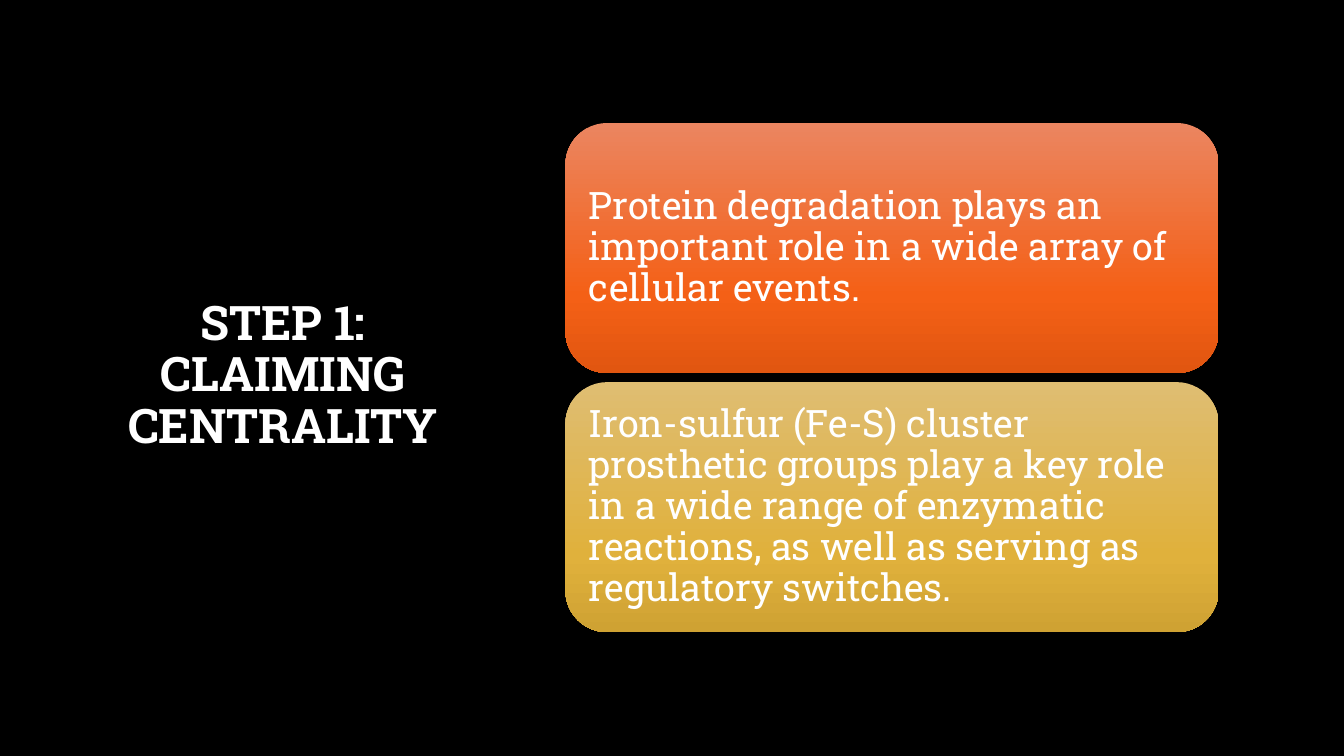
from copy import deepcopy

from pptx import Presentation
from pptx.dml.color import RGBColor
from pptx.enum.shapes import MSO_SHAPE as Shape
from pptx.enum.text import MSO_ANCHOR as Anchor, PP_ALIGN as Align
from pptx.util import Cm, Pt

FONT = "Roboto Slab"
BLACK = RGBColor(0x00, 0x00, 0x00)
WHITE = RGBColor(0xFF, 0xFF, 0xFF)
ORANGE = [RGBColor(0xEB, 0x85, 0x60), RGBColor(0xF4, 0x60, 0x16), RGBColor(0xE1, 0x56, 0x10)]
GOLD = [RGBColor(0xDF, 0xBD, 0x72), RGBColor(0xE0, 0xB1, 0x3C), RGBColor(0xCF, 0xA2, 0x33)]
STOPS = [0, 0.69, 1]

CARDS = [
    ("Protein degradation plays an important role in a wide array of cellular events.", ORANGE),
    ("Iron-sulfur (Fe-S) cluster prosthetic groups play a key role in a wide range of "
     "enzymatic reactions, as well as serving as regulatory switches.", GOLD),
]
TOP, PITCH = 3.1, 6.53


def write(frame, text, size, align, bold=False):
    frame.word_wrap = True
    frame.vertical_anchor = Anchor.MIDDLE
    para = frame.paragraphs[0]
    para.text = text
    para.alignment = align
    para.line_spacing = 0.9
    font = para.font
    font.name, font.size, font.bold = FONT, Pt(size), bold
    font.color.rgb = WHITE


def shade(fill, tones):
    """Fill from top to bottom with three tones."""
    fill.gradient()
    fill.gradient_angle = 270
    first = fill._xPr.xpath(".//a:gs")[0]
    first.addnext(deepcopy(first))
    for stop, place, tone in zip(fill.gradient_stops, STOPS, tones):
        stop.position = place
        stop.color.rgb = tone


deck = Presentation()
deck.slide_width, deck.slide_height = Cm(33.87), Cm(19.05)
slide = deck.slides.add_slide(deck.slide_layouts[6])
slide.background.fill.solid()
slide.background.fill.fore_color.rgb = BLACK

title = slide.shapes.add_textbox(Cm(2.08), Cm(1.7), Cm(10.11), Cm(15.57))
write(title.text_frame, "STEP 1: CLAIMING CENTRALITY", 34, Align.CENTER, bold=True)

for row, (text, tones) in enumerate(CARDS):
    card = slide.shapes.add_shape(
        Shape.ROUNDED_RECTANGLE, Cm(14.25), Cm(TOP + row * PITCH), Cm(16.46), Cm(6.3))
    card.shadow.inherit = False
    card.line.fill.background()
    shade(card.fill, tones)
    frame = card.text_frame
    frame.margin_left = frame.margin_right = Cm(0.28)
    frame.margin_top = frame.margin_bottom = Cm(0.28)
    write(frame, text, 27, Align.LEFT)

deck.save("out.pptx")
